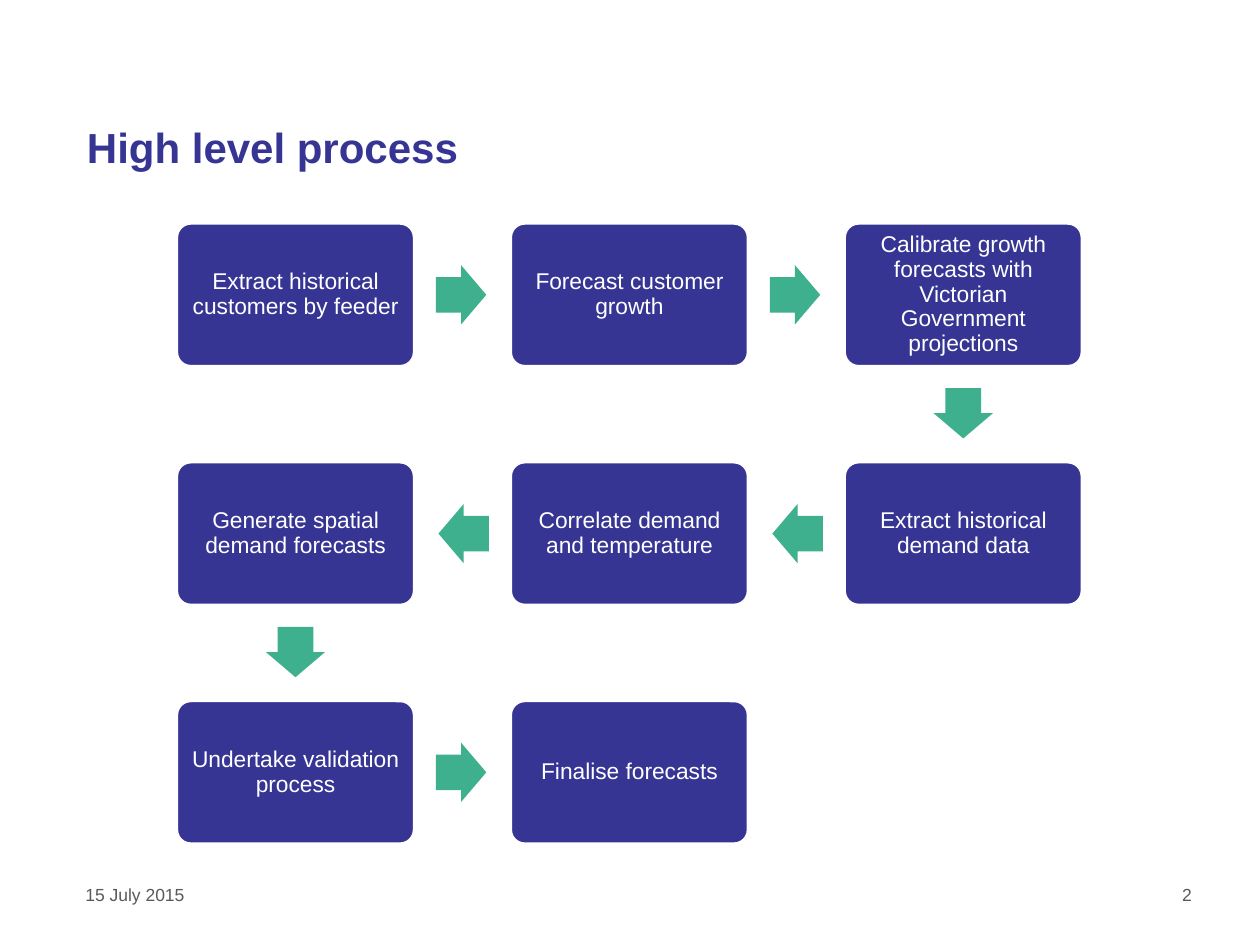
from pptx import Presentation
from pptx.dml.color import RGBColor
from pptx.enum.shapes import MSO_SHAPE
from pptx.enum.text import MSO_ANCHOR, PP_ALIGN
from pptx.util import Inches, Pt

ROUND_RECT, ARROW = MSO_SHAPE.ROUNDED_RECTANGLE, MSO_SHAPE.RIGHT_ARROW
LEFT, CENTER = PP_ALIGN.LEFT, PP_ALIGN.CENTER
MIDDLE, BOTTOM = MSO_ANCHOR.MIDDLE, MSO_ANCHOR.BOTTOM

COLORS = {"navy": "363594", "green": "3EB08E", "white": "FFFFFF", "grey": "595959"}
TITLE = "High level process"
STEPS = [
    "Extract historical customers by feeder",
    "Forecast customer growth",
    "Calibrate growth forecasts with Victorian Government projections",
    "Extract historical demand data",
    "Correlate demand and temperature",
    "Generate spatial demand forecasts",
    "Undertake validation process",
    "Finalise forecasts",
]
FOOTERS = [  # text, left, width, alignment
    ("15 July 2015", 0.58, 1.98, LEFT),
    ("2", 9.15, 0.54, CENTER),
]

COLUMNS = 3
GRID_X, GRID_Y = 1.4, 1.77
STEP_X, STEP_Y = 2.65, 1.895
BOX_W, BOX_H = 1.89, 1.14
ARROW_W, ARROW_H = 0.4, 0.47
ARROW_OFFSET = 0.37  # from the edge of a box to the centre of its arrow
ROTATION = {(1, 0): 0, (0, 1): 90, (-1, 0): 180}


def color(name):
    return RGBColor.from_string(COLORS[name])


def set_text(shape, text, size, color_name, align=CENTER, anchor=MIDDLE):
    tf = shape.text_frame
    tf.word_wrap = True
    tf.vertical_anchor = anchor
    p = tf.paragraphs[0]
    p.text = text
    p.alignment = align
    p.font.name = "Arial"
    p.font.size = Pt(size)
    p.font.color.rgb = color(color_name)
    return p


def add_filled(s, kind, x, y, w, h, fill):
    sp = s.shapes.add_shape(kind, Inches(x), Inches(y), Inches(w), Inches(h))
    sp.shadow.inherit = False
    sp.fill.solid()
    sp.fill.fore_color.rgb = color(fill)
    return sp


def cell(index):
    """Column and row of a step; every second row runs right to left."""
    row, col = divmod(index, COLUMNS)
    return (COLUMNS - 1 - col if row % 2 else col), row


def add_box(s, index, text):
    col, row = cell(index)
    sp = add_filled(s, ROUND_RECT, GRID_X + col * STEP_X, GRID_Y + row * STEP_Y,
                    BOX_W, BOX_H, "navy")
    sp.adjustments[0] = 0.1
    sp.line.color.rgb = color("white")
    sp.line.width = Pt(2)
    tf = sp.text_frame
    tf.margin_left = tf.margin_right = tf.margin_top = tf.margin_bottom = Inches(0.05)
    set_text(sp, text, 13, "white").line_spacing = 0.9


def add_arrow(s, index):
    """Arrow from a step to the next one."""
    (col, row), (next_col, next_row) = cell(index), cell(index + 1)
    dx, dy = next_col - col, next_row - row
    x = GRID_X + col * STEP_X + BOX_W / 2 + dx * (BOX_W / 2 + ARROW_OFFSET)
    y = GRID_Y + row * STEP_Y + BOX_H / 2 + dy * (BOX_H / 2 + ARROW_OFFSET)
    sp = add_filled(s, ARROW, x - ARROW_W / 2, y - ARROW_H / 2,
                    ARROW_W, ARROW_H, "green")
    sp.adjustments[0], sp.adjustments[1] = 0.6, 0.5
    sp.line.fill.background()
    sp.rotation = ROTATION[dx, dy]


def main():
    prs = Presentation()
    prs.slide_width, prs.slide_height = Inches(10), Inches(7.5)
    s = prs.slides.add_slide(prs.slide_layouts[5])

    title = s.shapes.title
    title.left, title.top = Inches(0.59), Inches(0.45)
    title.width, title.height = Inches(6.79), Inches(0.97)
    p = set_text(title, TITLE, 24, "navy", LEFT, BOTTOM)
    p.font.bold = True
    p.line_spacing = 0.9

    for text, x, w, align in FOOTERS:
        box = s.shapes.add_textbox(Inches(x), Inches(6.96), Inches(w), Inches(0.28))
        set_text(box, text, 10, "grey", align)

    for i, text in enumerate(STEPS):
        add_box(s, i, text)
        if i < len(STEPS) - 1:
            add_arrow(s, i)

    prs.save("out.pptx")


if __name__ == "__main__":
    main()
